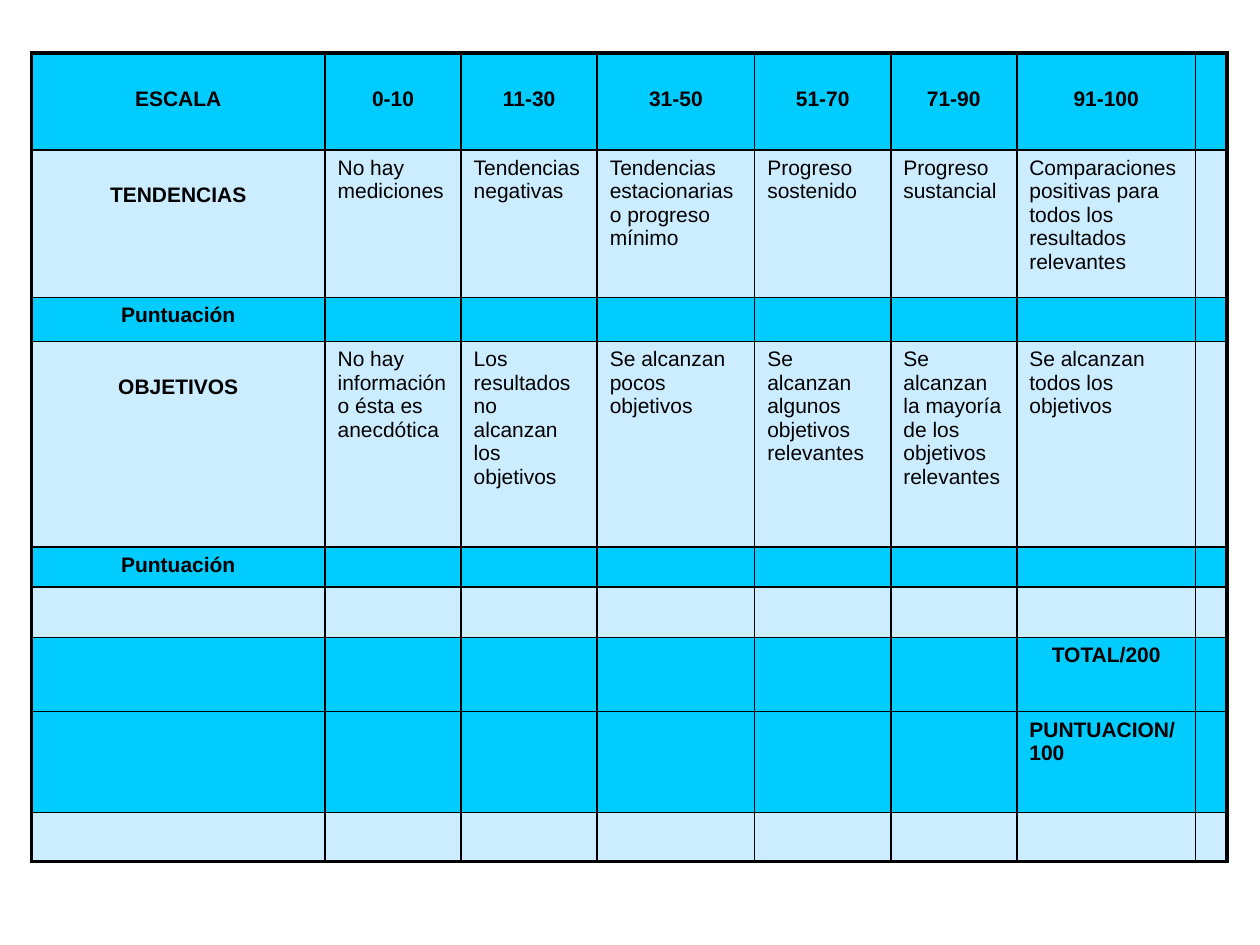
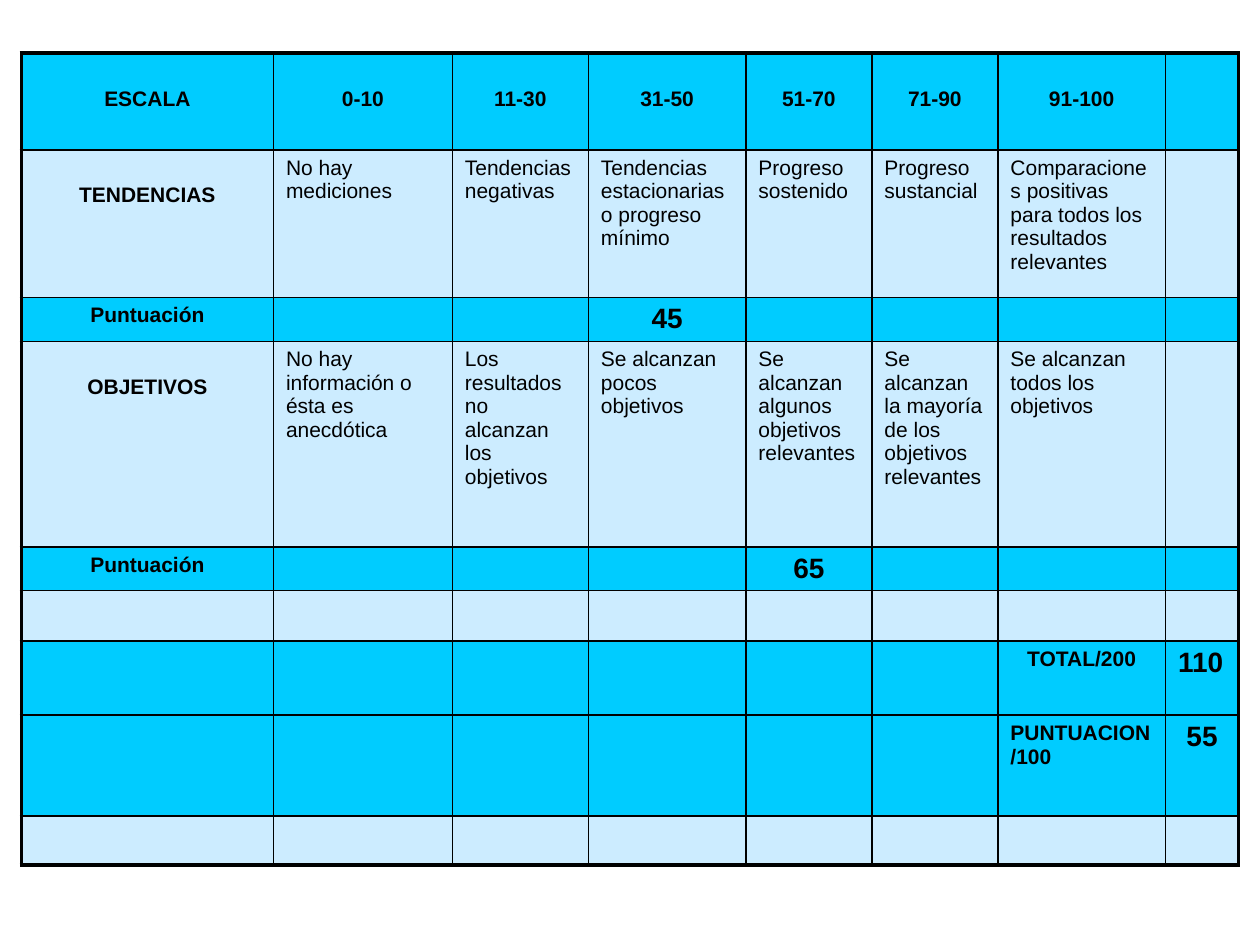
from lxml.etree import SubElement
from pptx import Presentation
from pptx.dml.color import RGBColor
from pptx.enum.text import PP_ALIGN
from pptx.oxml.ns import qn
from pptx.util import Inches, Pt

BRIGHT, PALE, BLACK = "00CCFF", "CCECFF", "000000"
LEFT, CENTER = PP_ALIGN.LEFT, PP_ALIGN.CENTER

# Each row: height, fill, texts from the first column on
ROWS = [
    (0.77, BRIGHT, ["ESCALA", "0-10", "11-30", "31-50", "51-70", "71-90", "91-100"]),
    (1.17, PALE, ["TENDENCIAS", "No hay mediciones", "Tendencias negativas",
                  "Tendencias estacionarias o progreso mínimo",
                  "Progreso sostenido", "Progreso sustancial",
                  "Comparaciones positivas para todos los resultados relevantes"]),
    (0.35, BRIGHT, ["Puntuación"]),
    (1.63, PALE, ["OBJETIVOS", "No hay información o ésta es anecdótica",
                  "Los resultados no alcanzan los objetivos",
                  "Se alcanzan pocos objetivos",
                  "Se alcanzan algunos objetivos relevantes",
                  "Se alcanzan la mayoría de los objetivos relevantes",
                  "Se alcanzan todos los objetivos"]),
    (0.32, BRIGHT, ["Puntuación"]),
    (0.4, PALE, []),
    (0.59, BRIGHT, [""] * 6 + ["TOTAL/200"]),
    (0.8, BRIGHT, [""] * 6 + ["PUNTUACION/100"]),
    (0.39, PALE, []),
]
HEADER, CRITERIA = 0, (1, 3)
TOTAL, FINAL = 6, 7

# Scores awarded in the worked example: (row, column) -> text, alignment
EXAMPLE_SCORES = {
    (2, 3): ("45", CENTER),
    (4, 4): ("65", CENTER),
    (TOTAL, 7): ("110", LEFT),
    (FINAL, 7): ("55", CENTER),
}


def color(hex_string):
    return RGBColor.from_string(hex_string)


class RubricDeck:
    font_name, text_size, score_size = "Arial", 12, 16
    inner_line, outer_line = 1, 2.25
    lowered_margin = 0.27

    def __init__(self):
        self.deck = Presentation()
        self.deck.slide_width, self.deck.slide_height = Inches(10), Inches(7.5)
        self.slide = None

    def new_slide(self):
        self.slide = self.deck.slides.add_slide(self.deck.slide_layouts[6])

    def border(self, cell, side, width):
        properties = cell._tc.get_or_add_tcPr()
        line = SubElement(properties, qn(f"a:ln{side}"), w=str(Pt(width)))
        fill = SubElement(line, qn("a:solidFill"))
        SubElement(fill, qn("a:srgbClr"), val=BLACK)

    def cell_text(self, cell, text, bold, align, size):
        paragraph = cell.text_frame.paragraphs[0]
        paragraph.text = text
        paragraph.alignment = align
        for run in paragraph.runs:
            run.font.name, run.font.size = self.font_name, Pt(size)
            run.font.bold, run.font.color.rgb = bold, color(BLACK)
        if not text:  # keeps empty rows from growing
            SubElement(paragraph._p, qn("a:endParaRPr"), sz=str(size * 100))

    def rubric(self, left, top, widths, scores):
        last_row, last_column = len(ROWS) - 1, len(widths) - 1
        heights = [height for height, _, _ in ROWS]
        table = self.slide.shapes.add_table(
            len(ROWS), len(widths), Inches(left), Inches(top),
            Inches(sum(widths)), Inches(sum(heights))).table
        table.first_row = table.horz_banding = False
        for column, width in zip(table.columns, widths):
            column.width = Inches(width)

        for r, (height, fill, texts) in enumerate(ROWS):
            table.rows[r].height = Inches(height)
            for c in range(len(widths)):
                cell = table.cell(r, c)
                # Borders come before the fill
                edges = {"L": c == 0, "R": c == last_column,
                         "T": r == 0, "B": r == last_row}
                for side, is_outer in edges.items():
                    self.border(cell, side, self.outer_line if is_outer else self.inner_line)
                cell.fill.solid()
                cell.fill.fore_color.rgb = color(fill)

                # Scores, then labels and descriptions
                if (r, c) in scores:
                    score, align = scores[r, c]
                    self.cell_text(cell, score, True, align, self.score_size)
                    continue
                is_description = r in CRITERIA and c > 0
                align = LEFT if is_description or r == FINAL else CENTER
                text = texts[c] if c < len(texts) else ""
                self.cell_text(cell, text, not is_description, align, self.text_size)
                if text and (r == HEADER or r in CRITERIA and c == 0):
                    cell.margin_top = Inches(self.lowered_margin)


def main():
    rubric_deck = RubricDeck()

    # Empty rubric
    rubric_deck.new_slide()
    rubric_deck.rubric(0.25, 0.42, [2.33, 1.08, 1.08, 1.25, 1.08, 1, 1.42, 0.25], {})

    # Rubric with example scores
    rubric_deck.new_slide()
    rubric_deck.rubric(0.17, 0.42, [2, 1.42, 1.08, 1.25, 1, 1, 1.33, 0.58], EXAMPLE_SCORES)

    rubric_deck.deck.save("out.pptx")


if __name__ == "__main__":
    main()
